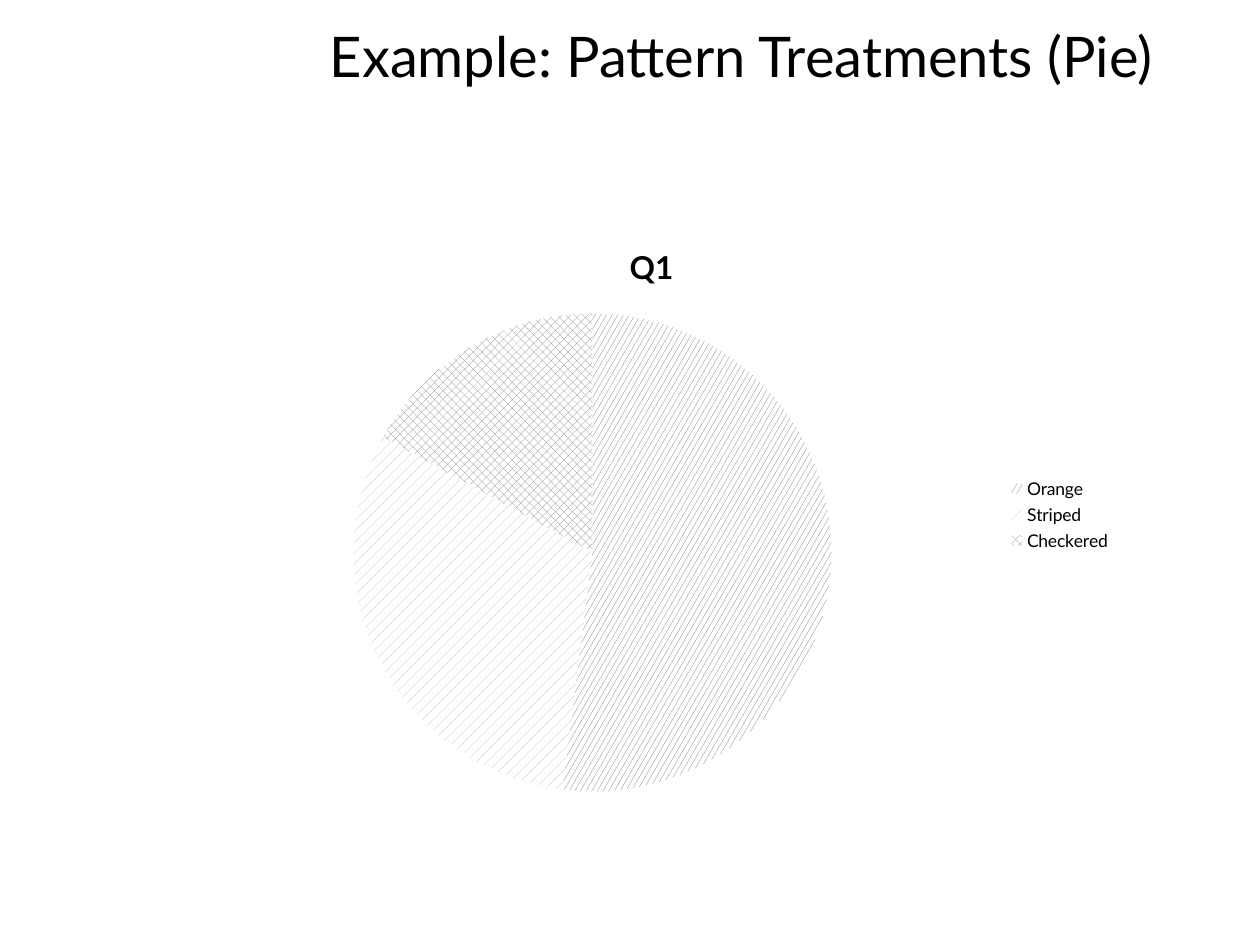
from pptx import Presentation
from pptx.chart.data import CategoryChartData
from pptx.dml.color import RGBColor
from pptx.enum.chart import XL_CHART_TYPE, XL_LEGEND_POSITION
from pptx.enum.dml import MSO_PATTERN
from pptx.enum.text import MSO_ANCHOR, PP_ALIGN
from pptx.util import Inches, Pt

FONT = "Lato"
BLACK = "000000"
WHITE = "FFFFFF"
SLICES = [
    ("Orange", 52, MSO_PATTERN.LARGE_CONFETTI, "656565"),
    ("Striped", 31, MSO_PATTERN.DASHED_UPWARD_DIAGONAL, "B4B4B4"),
    ("Checkered", 17, MSO_PATTERN.PERCENT_50, "848484"),
]


def color(hex_value):
    """Return the colour for a hex string."""
    return RGBColor.from_string(hex_value)


def style_font(font, size, bold=False):
    """Apply the slide's typeface and text colour."""
    font.name = FONT
    font.size = Pt(size)
    font.bold = bold
    font.color.rgb = color(BLACK)


def add_heading(slide, left, top, width, height):
    """Place the right-aligned heading in the given box."""
    heading = slide.shapes.add_textbox(left, top, width, height).text_frame
    heading.word_wrap = True
    heading.vertical_anchor = MSO_ANCHOR.BOTTOM
    line = heading.paragraphs[0]
    line.alignment = PP_ALIGN.RIGHT
    run = line.add_run()
    run.text = "Example: Pattern Treatments (Pie)"
    style_font(run.font, 32)


def add_pattern_pie(slide, left, top, width, height):
    """Place the pie with patterned slices in the given box."""
    quarter = CategoryChartData()
    quarter.categories = [name for name, *_ in SLICES]
    quarter.add_series("Q1", [share for _, share, *_ in SLICES])
    pie = slide.shapes.add_chart(
        XL_CHART_TYPE.PIE, left, top, width, height, quarter
    ).chart
    style_font(pie.font, 10)

    pie.has_title = True
    title_run = pie.chart_title.text_frame.paragraphs[0].add_run()
    title_run.text = "Q1"
    style_font(title_run.font, 18, bold=True)

    pie.has_legend = True
    pie.legend.position = XL_LEGEND_POSITION.RIGHT
    pie.legend.include_in_layout = False
    style_font(pie.legend.font, 10)

    plot = pie.plots[0]
    plot.vary_by_categories = True
    for index, (_, _, pattern, ink) in enumerate(SLICES):
        slice_format = plot.series[0].points[index].format
        slice_format.fill.patterned()
        slice_format.fill.pattern = pattern
        slice_format.fill.fore_color.rgb = color(ink)
        slice_format.fill.back_color.rgb = color(WHITE)
        slice_format.line.fill.background()


def main():
    """Build and save the slide."""
    deck = Presentation()
    deck.slide_width, deck.slide_height = Inches(10), Inches(7.5)
    slide = deck.slides.add_slide(deck.slide_layouts[6])
    add_heading(slide, Inches(0.33), Inches(0.33), Inches(8.92), Inches(0.42))
    add_pattern_pie(slide, Inches(1.42), Inches(1.75), Inches(7.5), Inches(4.67))
    deck.save("out.pptx")


if __name__ == "__main__":
    main()
